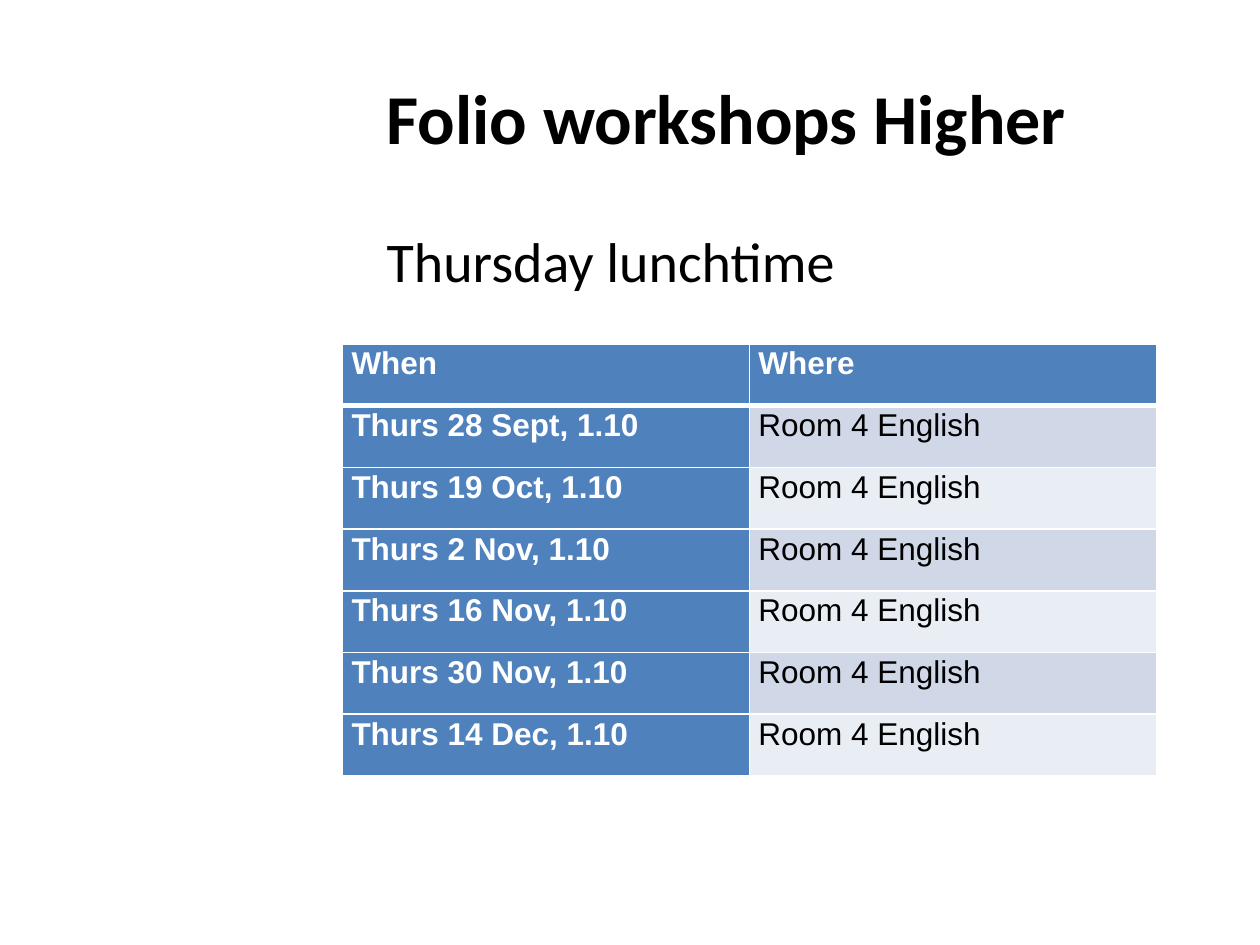
"""Build the folio workshops slide with its timetable."""
import pptx
import pptx.dml.color
import pptx.enum.text
import pptx.oxml.ns
import pptx.util
import lxml.etree

TITLE = "Folio workshops Higher"
SUBTITLE = "Thursday lunchtime"
HEADINGS = ("When", "Where")
DATES = ("28 Sept", "19 Oct", "2 Nov", "16 Nov", "30 Nov", "14 Dec")
ROOM = "Room 4 English"
COLOURS = {"text": "000000", "light": "FFFFFF", "blue": "4F81BD",
           "odd": "D0D8E8", "even": "E9EDF4"}

WIDTH, HEIGHT = 10, 7.5
TEXT_LEFT, TEXT_WIDTH = 2.97, 6.53
TABLE_LEFT, TABLE_TOP = 2.72, 2.73
COLUMN_WIDTH, ROW_HEIGHT = 3.23, 0.49
INSET = 0.07

inches = pptx.util.Inches


def colour(name):
    return pptx.dml.color.RGBColor.from_string(COLOURS[name])


def add_span(para, text, size, font, tint, bold):
    span = para.add_run()
    span.text = text
    span.font.size = pptx.util.Pt(size)
    span.font.name = font
    span.font.bold = bold
    span.font.color.rgb = colour(tint)


def add_text(page, top, height, text, size, bold, anchor):
    box = page.shapes.add_textbox(inches(TEXT_LEFT), inches(top),
                                  inches(TEXT_WIDTH), inches(height))
    frame = box.text_frame
    frame.word_wrap = True
    frame.vertical_anchor = anchor
    add_span(frame.paragraphs[0], text, size, "Calibri", "text", bold)


def set_borders(cell, widths):
    properties = cell._tc.get_or_add_tcPr()
    qualify = pptx.oxml.ns.qn
    for position, (side, width) in enumerate(widths.items()):
        line = lxml.etree.Element(qualify("a:ln" + side), w=str(pptx.util.Pt(width)))
        fill = lxml.etree.SubElement(line, qualify("a:solidFill"))
        lxml.etree.SubElement(fill, qualify("a:srgbClr"), val=COLOURS["light"])
        properties.insert(position, line)


def style_cell(cell, text, row, column):
    accent = row == 0 or column == 0
    band = "odd" if row % 2 else "even"
    cell.fill.solid()
    cell.fill.fore_color.rgb = colour("blue" if accent else band)
    cell.margin_left = cell.margin_right = inches(INSET)
    cell.margin_top = cell.margin_bottom = 0
    para = cell.text_frame.paragraphs[0]
    para.line_spacing = 1.07
    add_span(para, text, 18, "Arial", "light" if accent else "text", accent)
    set_borders(cell, {"L": 1, "R": 1, "T": 3 if row == 1 else 1,
                       "B": 3 if row == 0 else 1})


def add_timetable(page):
    rows = [HEADINGS] + [(f"Thurs {date}, 1.10", ROOM) for date in DATES]
    table = page.shapes.add_table(
        len(rows), len(HEADINGS), inches(TABLE_LEFT), inches(TABLE_TOP),
        inches(COLUMN_WIDTH * len(HEADINGS)), inches(ROW_HEIGHT * len(rows))).table
    table.first_col = True
    for row, texts in enumerate(rows):
        table.rows[row].height = inches(ROW_HEIGHT)
        for column, text in enumerate(texts):
            style_cell(table.cell(row, column), text, row, column)


def main():
    deck = pptx.Presentation()
    deck.slide_width, deck.slide_height = inches(WIDTH), inches(HEIGHT)
    page = deck.slides.add_slide(deck.slide_layouts[6])
    anchors = pptx.enum.text.MSO_ANCHOR
    add_text(page, 0.3, 1.25, TITLE, 40, True, anchors.MIDDLE)
    add_text(page, 1.75, 4.95, SUBTITLE, 32, False, anchors.TOP)
    add_timetable(page)
    deck.save("out.pptx")


if __name__ == "__main__":
    main()
